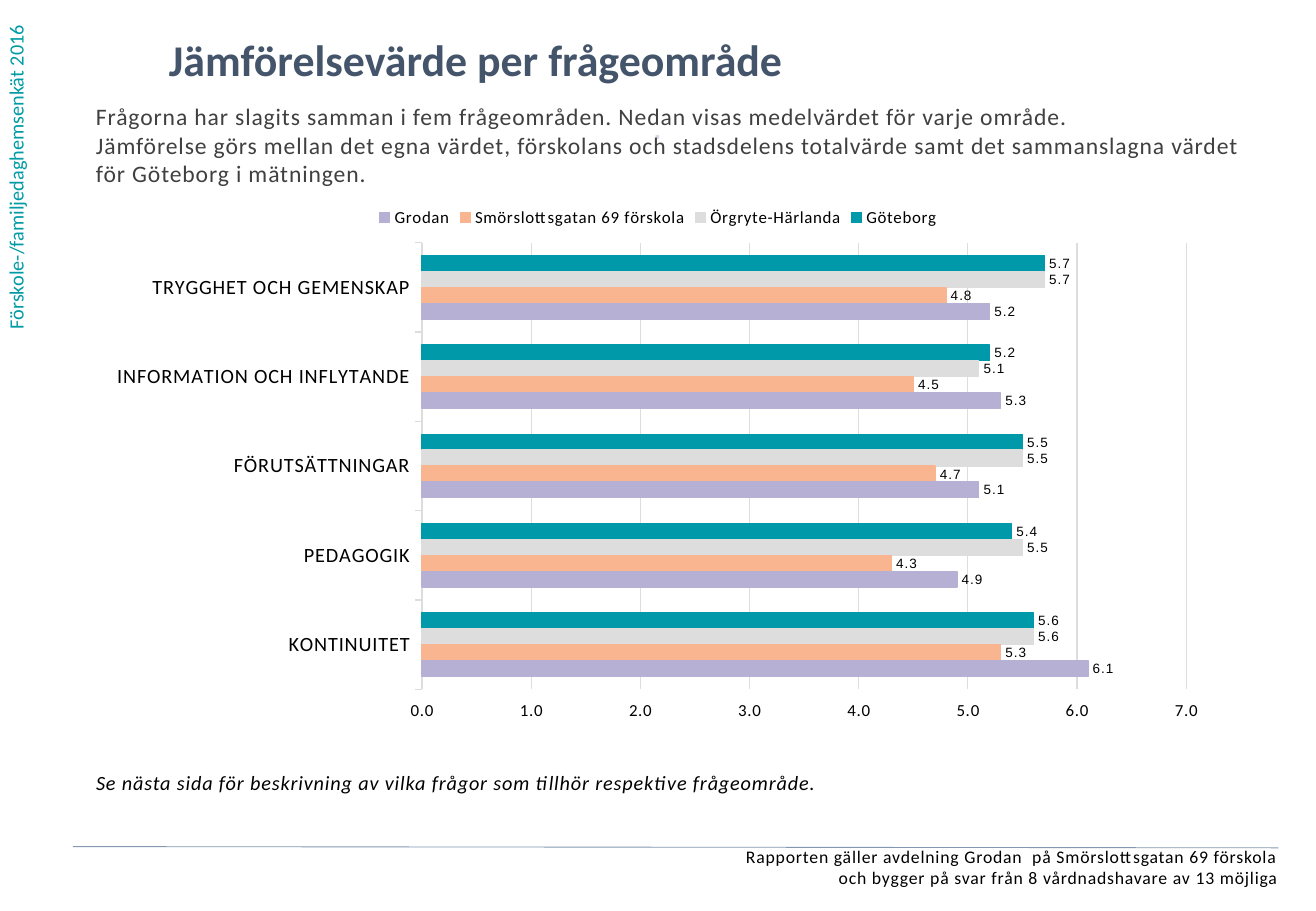
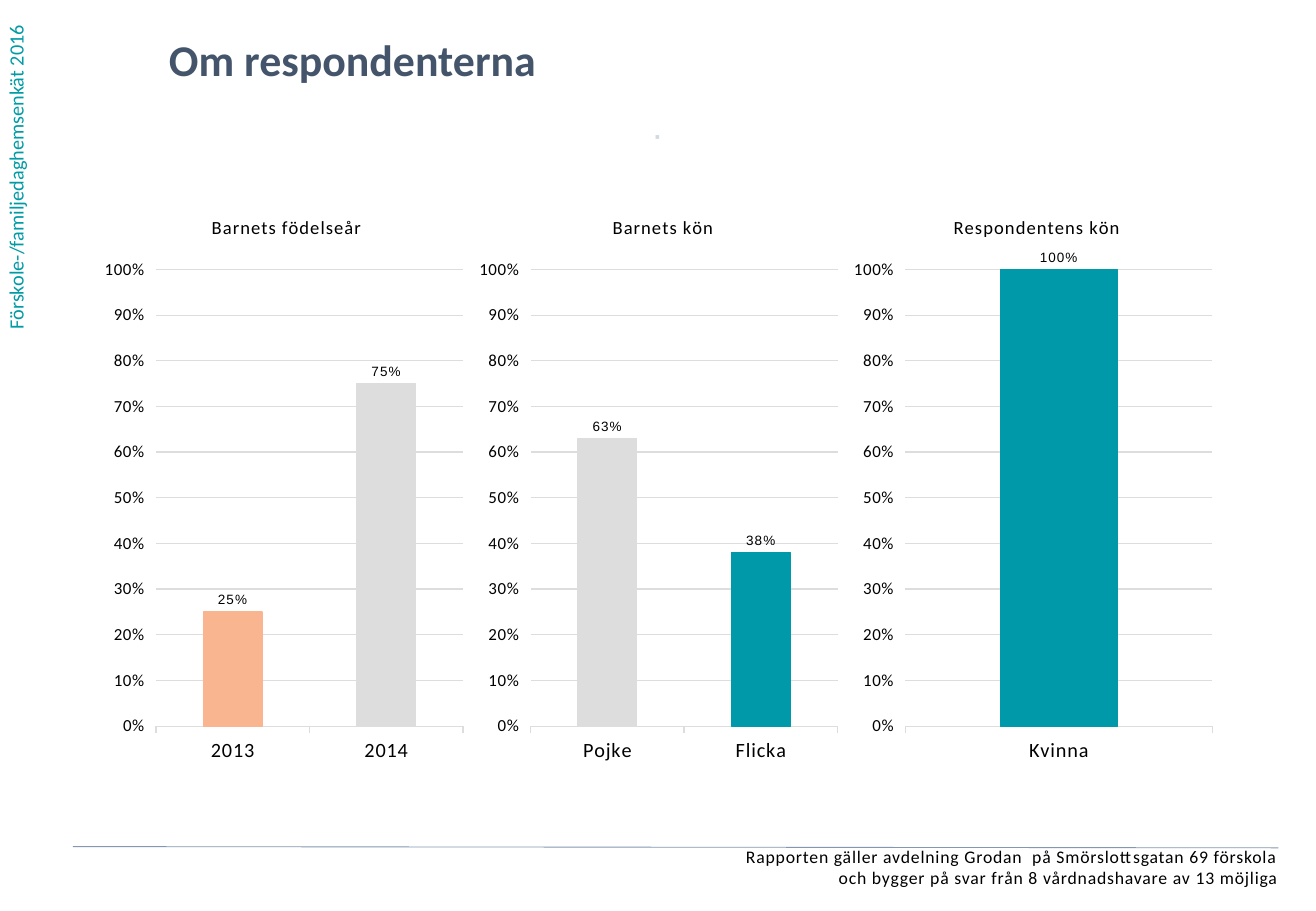
from pptx import Presentation
from pptx.chart.data import CategoryChartData
from pptx.dml.color import RGBColor
from pptx.enum.chart import XL_CHART_TYPE, XL_LABEL_POSITION, XL_LEGEND_POSITION, XL_TICK_LABEL_POSITION
from pptx.enum.shapes import MSO_CONNECTOR
from pptx.enum.text import PP_ALIGN
from pptx.oxml.ns import qn
from pptx.oxml.xmlchemy import OxmlElement
from pptx.util import Inches, Pt

COLOURS = {
    "side": "009BA4", "title": "44546A", "body": "404040", "black": "000000",
    "dot": "D2D9E2", "rule": "8497B0", "grid": "DDDDDD",
    "teal": "0099AA", "grey": "DDDDDD", "peach": "F9B590", "lilac": "B6B1D4",
}
FONT = "Calibri"
CONTENT_LEFT = 0.79
CONTENT_WIDTH = 9.25
CHART_TOP = 1.6

SIDE_LABEL = "Förskole-/familjedaghemsenkät 2016"
FOOTER = ("Rapporten gäller avdelning Grodan  på Smörslottsgatan 69 förskola\v"
          "och bygger på svar från 8 vårdnadshavare av 13 möjliga")
INTRO = ("Frågorna har slagits samman i fem frågeområden. Nedan visas medelvärdet för varje område.\v"
         "Jämförelse görs mellan det egna värdet, förskolans och stadsdelens totalvärde samt det "
         "sammanslagna värdet för Göteborg i mätningen.")
NOTE = "Se nästa sida för beskrivning av vilka frågor som tillhör respektive frågeområde."

AREAS = ["TRYGGHET OCH GEMENSKAP", "INFORMATION OCH INFLYTANDE", "FÖRUTSÄTTNINGAR",
         "PEDAGOGIK", "KONTINUITET"]
AREA_SERIES = [
    ("Göteborg", [5.7, 5.2, 5.5, 5.4, 5.6], "teal"),
    ("Örgryte-Härlanda", [5.7, 5.1, 5.5, 5.5, 5.6], "grey"),
    ("Smörslottsgatan 69 förskola", [4.8, 4.5, 4.7, 4.3, 5.3], "peach"),
    ("Grodan", [5.2, 5.3, 5.1, 4.9, 6.1], "lilac"),
]
RESPONDENT_CHARTS = [
    ("Barnets födelseår", 0.3, ["2014", "2013"], [0.75, 0.25], ["grey", "peach"]),
    ("Barnets kön", 0.37, ["Flicka", "Pojke"], [0.38, 0.63], ["teal", "grey"]),
    ("Respondentens kön", 0.28, ["Kvinna"], [1], ["teal"]),
]


def colour(name):
    return RGBColor.from_string(COLOURS[name])


def style_font(font, size, colour_name="black", name=FONT, bold=False, italic=False):
    font.size = Pt(size)
    font.name = name
    font.bold = bold
    font.italic = italic
    font.color.rgb = colour(colour_name)


def space_letters(element):
    for tag in ("a:defRPr", "a:rPr"):
        for properties in element.iter(qn(tag)):
            properties.set("spc", "50")


def add_text(slide, box, text, size, colour_name="black", align=PP_ALIGN.LEFT,
             margin=0, spaced=True, bold=False, italic=False):
    shape = slide.shapes.add_textbox(*map(Inches, box))
    frame = shape.text_frame
    frame.word_wrap = True
    frame.margin_left = frame.margin_right = Inches(2 * margin)
    frame.margin_top = frame.margin_bottom = Inches(margin)
    frame.text = text
    paragraph = frame.paragraphs[0]
    paragraph.alignment = align
    style_font(paragraph.font, size, colour_name, bold=bold, italic=italic)
    if spaced:
        space_letters(shape.element)
    return shape


def add_rule(slide):
    rule = slide.shapes.add_connector(
        MSO_CONNECTOR.STRAIGHT, Inches(0.6), Inches(6.97), Inches(10.52), Inches(6.98))
    rule.line.color.rgb = colour("rule")
    rule.line.width = Pt(0.5)
    rule.element.spPr.append(OxmlElement("a:effectLst"))


def add_base_slide(presentation, title):
    slide = presentation.slides.add_slide(presentation.slide_layouts[6])
    side = add_text(slide, (-0.02, 0, 0.4, 2.81), SIDE_LABEL, 12, "side", margin=0.05, spaced=False)
    side.element.find(qn("p:txBody")).find(qn("a:bodyPr")).set("vert", "vert270")
    add_text(slide, (1.39, 0.27, 8.34, 0.57), title, 26, "title", spaced=False, bold=True)
    add_text(slide, (0.12, 6.96, 10.4, 0.43), FOOTER, 10.5, align=PP_ALIGN.RIGHT)
    add_text(slide, (3.87, 1.02, 3.08, 0.39), "⋅", 12, "dot", PP_ALIGN.CENTER, bold=True)
    add_rule(slide)
    return slide


def set_layout(parent, index, **values):
    layout = parent.find(qn("c:layout"))
    if layout is None:
        layout = OxmlElement("c:layout")
        parent.insert(index, layout)
    manual = OxmlElement("c:manualLayout")
    layout.append(manual)
    for tag, value in values.items():
        child = OxmlElement(f"c:{tag}")
        child.set("val", str(value))
        manual.append(child)


def set_plot_area(chart, x, y, w, h):
    plot_area = chart.element.find(qn("c:chart")).find(qn("c:plotArea"))
    set_layout(plot_area, 0, layoutTarget="inner", xMode="edge", yMode="edge", x=x, y=y, w=w, h=h)


def paint(part, colour_name):
    part.format.fill.solid()
    part.format.fill.fore_color.rgb = colour(colour_name)
    part.format.line.color.rgb = colour(colour_name)
    part.format.line.width = Pt(0.75)


def draw_grey_line(line):
    line.color.rgb = colour("grid")
    line.width = Pt(0.75)


def style_axes(chart, maximum, step, number_format):
    categories = chart.category_axis
    categories.reverse_order = True
    style_font(categories.tick_labels.font, 12)
    draw_grey_line(categories.format.line)
    values = chart.value_axis
    values.minimum_scale = 0
    values.maximum_scale = maximum
    values.major_unit = step
    values.has_major_gridlines = True
    draw_grey_line(values.major_gridlines.format.line)
    values.format.line.fill.background()
    values.tick_label_position = XL_TICK_LABEL_POSITION.HIGH
    values.tick_labels.number_format = number_format
    values.tick_labels.number_format_is_linked = False
    style_font(values.tick_labels.font, 10)


def add_bars(slide, kind, box, categories, series_rows, maximum, step, number_format):
    data = CategoryChartData()
    data.categories = categories
    for name, values, _ in series_rows:
        data.add_series(name, values)
    chart = slide.shapes.add_chart(kind, *map(Inches, box), data).chart
    style_font(chart.font, 10)
    chart.has_title = False
    chart.has_legend = False
    style_axes(chart, maximum, step, number_format)
    plot = chart.plots[0]
    plot.gap_width = 162
    plot.overlap = 0
    plot.vary_by_categories = False
    for series, (_, _, colour_name) in zip(plot.series, series_rows):
        paint(series, colour_name)
        series.invert_if_negative = False
        labels = series.data_labels
        labels.show_value = True
        labels.position = XL_LABEL_POSITION.OUTSIDE_END
        labels.number_format = number_format
        labels.number_format_is_linked = False
        style_font(labels.font, 8, name="Arial")
    return chart


def add_area_chart(slide):
    chart = add_bars(slide, XL_CHART_TYPE.BAR_CLUSTERED,
                     (CONTENT_LEFT, CHART_TOP, CONTENT_WIDTH, 4.43),
                     AREAS, AREA_SERIES, 7, 1, "0.0;0.0")
    chart.has_legend = True
    chart.legend.position = XL_LEGEND_POSITION.TOP
    chart.legend.include_in_layout = False
    style_font(chart.legend.font, 10)
    set_plot_area(chart, 0.29, 0.09, 0.68, 0.83)
    space_letters(chart.element)


def add_respondent_chart(slide, left, width, title, title_x, categories, values, point_colours):
    chart = add_bars(slide, XL_CHART_TYPE.COLUMN_CLUSTERED, (left, CHART_TOP, width, 4.76),
                     categories, [("Series 1", values, "teal")], 1, 0.1, "0%;0%")
    for index, colour_name in enumerate(point_colours):
        paint(chart.plots[0].series[0].points[index], colour_name)
    chart.has_title = True
    frame = chart.chart_title.text_frame
    frame.text = title
    style_font(frame.paragraphs[0].font, 11)
    chart.chart_title.include_in_layout = False
    title_element = chart.element.find(qn("c:chart")).find(qn("c:title"))
    set_layout(title_element, 1, xMode="edge", yMode="edge", x=title_x, y=0.03)
    set_plot_area(chart, 0.16, 0.13, 0.82, 0.79)
    space_letters(chart.element)


def main():
    presentation = Presentation()
    presentation.slide_width = Inches(10.83)
    presentation.slide_height = Inches(7.5)

    areas = add_base_slide(presentation, "Jämförelsevärde per frågeområde")
    add_text(areas, (CONTENT_LEFT, 0.84, 9.46, 1.01), INTRO, 14, "body")
    add_text(areas, (CONTENT_LEFT, 6.34, CONTENT_WIDTH, 0.5), NOTE, 12, italic=True)
    add_area_chart(areas)

    respondents = add_base_slide(presentation, "Om respondenterna")
    width = CONTENT_WIDTH / len(RESPONDENT_CHARTS)
    for index, content in enumerate(RESPONDENT_CHARTS):
        add_respondent_chart(respondents, CONTENT_LEFT + index * width, width, *content)

    presentation.save("out.pptx")


if __name__ == "__main__":
    main()
